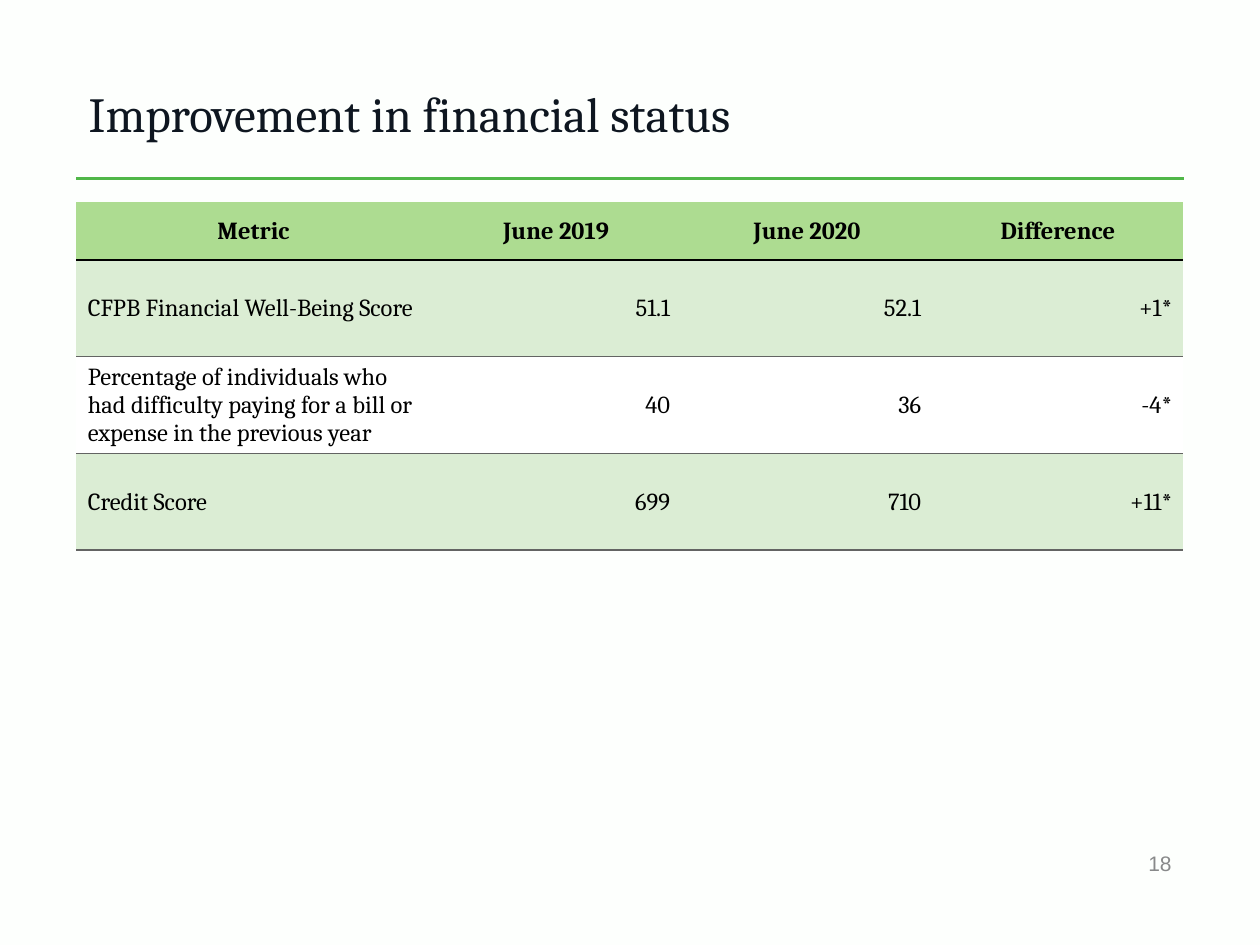
from lxml import etree
from pptx import Presentation
from pptx.dml.color import RGBColor
from pptx.enum import shapes, text
from pptx.oxml import ns
from pptx.util import Cm, Pt

TITLE = "Improvement in financial status"
PAGE_NUMBER = "18"
METRICS = [
    ("Metric", "June 2019", "June 2020", "Difference"),
    ("CFPB Financial Well-Being Score", "51.1", "52.1", "+1*"),
    ("Percentage of individuals who had difficulty paying for a bill or "
     "expense in the previous year", "40", "36", "-4*"),
    ("Credit Score", "699", "710", "+11*"),
]

BACKGROUND = RGBColor(0xFD, 0xFF, 0xFD)
NAVY = RGBColor(0x0E, 0x16, 0x20)
GREEN = RGBColor(0x50, 0xB7, 0x48)
HEADER_GREEN = RGBColor(0xAD, 0xDC, 0x91)
PALE_GREEN = RGBColor(0xDB, 0xED, 0xD4)
WHITE = RGBColor(0xFF, 0xFF, 0xFF)
BLACK = RGBColor(0, 0, 0)
RULE_GRAY = RGBColor(0x63, 0x64, 0x63)
PAGE_GRAY = RGBColor(0x88, 0x89, 0x8A)

LEFT, WIDTH = Cm(1.54), Cm(22.33)
METRIC_WIDTH, VALUE_WIDTH = Cm(7.14), Cm(5.06)
HEADER_HEIGHT, ROW_HEIGHT = Cm(1.17), Cm(1.95)
NO_STYLE = "{2D5ABB26-0587-4C30-8999-92F81FD0307C}"
ALIGN = text.PP_ALIGN


def style(paragraph, size, color, align, font="Cambria", bold=False):
    paragraph.alignment = align
    paragraph.font.name = font
    paragraph.font.size = Pt(size)
    paragraph.font.bold = bold
    paragraph.font.color.rgb = color


def add_label(slide, words, box, *look):
    frame = slide.shapes.add_textbox(*box).text_frame
    frame.word_wrap = True
    frame.vertical_anchor = text.MSO_ANCHOR.MIDDLE
    frame.text = words
    style(frame.paragraphs[0], *look)


def add_bottom_border(cell, color):
    border = etree.Element(ns.qn("a:lnB"), w=str(Pt(1)))
    fill = etree.SubElement(border, ns.qn("a:solidFill"))
    etree.SubElement(fill, ns.qn("a:srgbClr"), val=str(color))
    cell._tc.get_or_add_tcPr().insert(0, border)


def fill_cell(cell, words, row, column):
    header = row == 0
    if header:
        align, background = ALIGN.CENTER, HEADER_GREEN
    else:
        align = ALIGN.RIGHT if column else ALIGN.LEFT
        background = PALE_GREEN if row % 2 else WHITE
    cell.text = words
    cell.vertical_anchor = text.MSO_ANCHOR.MIDDLE
    cell.margin_left = Cm(0.23 if align == ALIGN.LEFT else 0.02)
    cell.margin_right = Cm(0.23 if align == ALIGN.RIGHT else 0.02)
    cell.margin_top, cell.margin_bottom = Cm(0.02), 0
    cell.fill.solid()
    cell.fill.fore_color.rgb = background
    style(cell.text_frame.paragraphs[0], 14, BLACK, align, bold=header)
    add_bottom_border(cell, BLACK if header else RULE_GRAY)


def add_metrics(slide):
    height = HEADER_HEIGHT + ROW_HEIGHT * (len(METRICS) - 1)
    frame = slide.shapes.add_table(
        len(METRICS), len(METRICS[0]), LEFT, Cm(4.07), WIDTH, height)
    table = frame.table
    table.first_row = table.horz_banding = False
    table._tbl.tblPr.find(ns.qn("a:tableStyleId")).text = NO_STYLE
    for index, column in enumerate(table.columns):
        column.width = VALUE_WIDTH if index else METRIC_WIDTH
    for row, values in enumerate(METRICS):
        table.rows[row].height = ROW_HEIGHT if row else HEADER_HEIGHT
        for column, words in enumerate(values):
            fill_cell(table.cell(row, column), words, row, column)


def main():
    deck = Presentation()
    deck.slide_width, deck.slide_height = Cm(25.4), Cm(19.05)
    slide = deck.slides.add_slide(deck.slide_layouts[6])
    slide.background.fill.solid()
    slide.background.fill.fore_color.rgb = BACKGROUND

    rule = slide.shapes.add_connector(
        shapes.MSO_CONNECTOR.STRAIGHT, LEFT, Cm(3.6), LEFT + WIDTH, Cm(3.6))
    rule.line.color.rgb = GREEN
    rule.line.width = Pt(2)
    etree.SubElement(rule._element.spPr, ns.qn("a:effectLst"))

    add_label(slide, TITLE, (LEFT, Cm(1.25), WIDTH, Cm(2.06)),
              28, NAVY, ALIGN.LEFT)
    add_label(slide, PAGE_NUMBER, (Cm(15.82), Cm(16.89), Cm(8.05), Cm(1.02)),
              12, PAGE_GRAY, ALIGN.RIGHT, "Arial")
    add_metrics(slide)
    deck.save("out.pptx")


if __name__ == "__main__":
    main()
